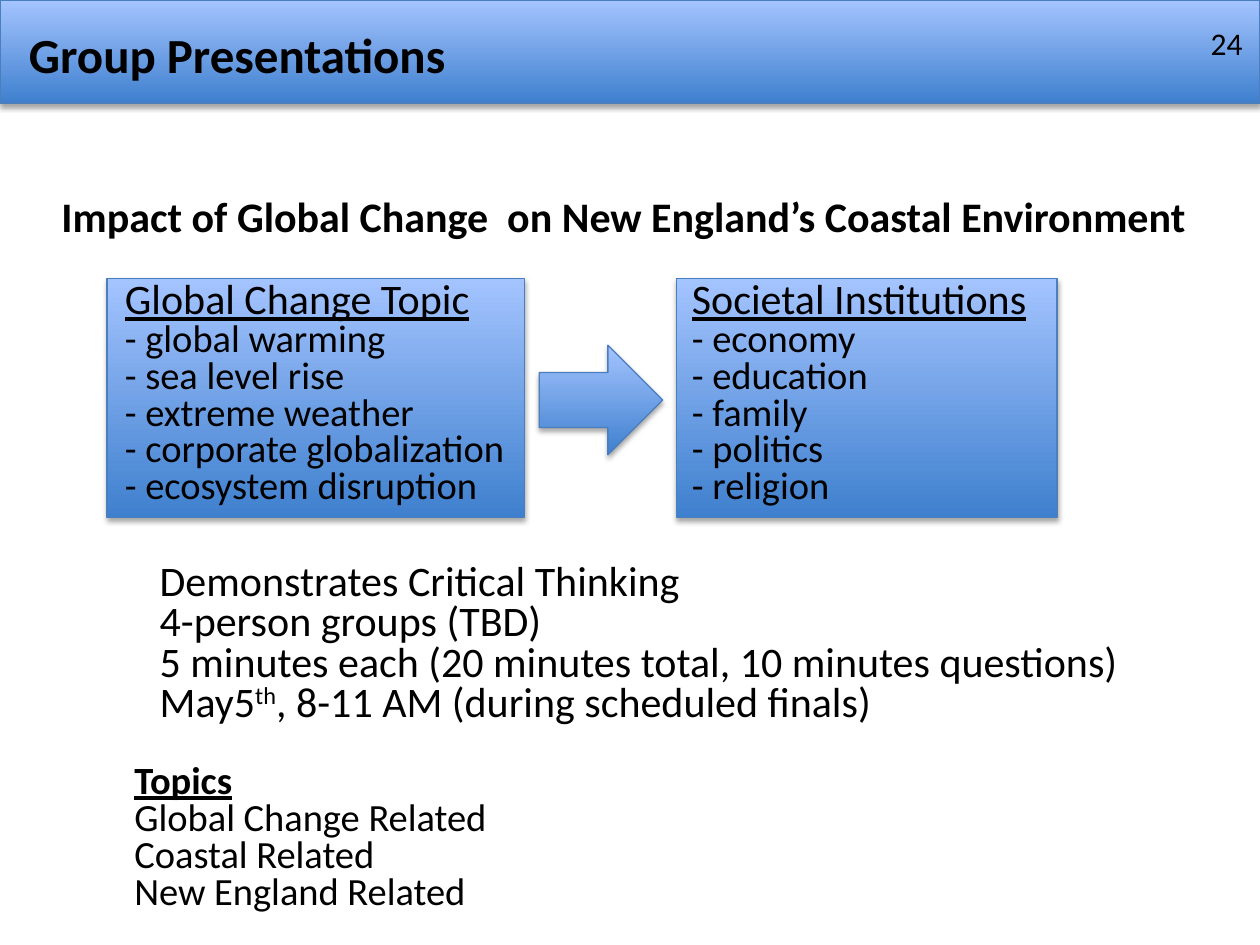
from dataclasses import dataclass

from lxml import etree
from pptx import Presentation
from pptx import util as u
from pptx.dml.color import RGBColor
from pptx.enum import shapes, text
from pptx.oxml.ns import qn


@dataclass(frozen=True)
class Theme:
    font: str = "Calibri"
    ink: str = "000000"
    deep: str = "3F80CE"
    pale: str = "A4C4FF"
    edge: str = "4B7EBC"
    title: int = 28
    heading: int = 24
    item: int = 22
    number: int = 18
    tight: float = 0.8


THEME = Theme()


@dataclass(frozen=True)
class Box:
    left: float
    top: float
    width: float
    height: float

    def within(self, left, top, width, height):
        """Return a box placed relative to this one."""
        return Box(self.left + left, self.top + top, width, height)

    def lengths(self):
        return [u.Cm(n) for n in (self.left, self.top, self.width, self.height)]


def add_run(para, words, size, bold=False, underline=False, raised=False):
    span = para.add_run()
    span.text = words
    font = span.font
    font.name, font.size = THEME.font, u.Pt(size)
    font.bold, font.underline = bold, underline
    font.color.rgb = RGBColor.from_string(THEME.ink)
    if raised:
        span._r.get_or_add_rPr().set("baseline", "30000")


def write_lines(frame, lines, spacing=THEME.tight):
    """Each line is a list of runs: (words, size, optional styles)."""
    for index, line in enumerate(lines):
        para = frame.add_paragraph() if index else frame.paragraphs[0]
        para.alignment = text.PP_ALIGN.LEFT
        para.line_spacing = spacing
        for words, size, *styles in line:
            add_run(para, words, size, **{style: True for style in styles})


def add_text(page, box, lines, spacing=THEME.tight):
    frame = page.shapes.add_textbox(*box.lengths()).text_frame
    frame.word_wrap = True
    write_lines(frame, lines, spacing)
    return frame


def add_glossy(page, kind, box):
    """Preset shape with the blue gradient, thin edge and soft shadow."""
    shape = page.shapes.add_shape(kind, *box.lengths())
    shape.fill.gradient()
    shape.fill.gradient_angle = 90
    for stop, colour, position in zip(
            shape.fill.gradient_stops, (THEME.deep, THEME.pale), (0, 1)):
        stop.color.rgb = RGBColor.from_string(colour)
        stop.position = position
    shape.line.color.rgb = RGBColor.from_string(THEME.edge)
    shape.line.width = u.Pt(0.75)
    shape.shadow.inherit = False
    effects = shape._element.spPr.find(qn("a:effectLst"))
    shadow = etree.SubElement(
        effects, qn("a:outerShdw"), blurRad=str(u.Pt(3.1)),
        dist=str(u.Pt(1.8)), dir="5400000", rotWithShape="0")
    colour = etree.SubElement(shadow, qn("a:srgbClr"), val="000000")
    etree.SubElement(colour, qn("a:alpha"), val="35000")
    return shape


def add_header(page, box, words, number):
    band = add_glossy(page, shapes.MSO_SHAPE.RECTANGLE, box)
    page.shapes._spTree.insert(2, band._element)  # behind the title

    title = page.shapes.title
    title.left, title.top, title.width, title.height = box.within(
        0.33, 0.36, 24.69, 1.45).lengths()
    frame = title.text_frame
    frame.auto_size = text.MSO_AUTO_SIZE.NONE
    frame.vertical_anchor = text.MSO_ANCHOR.MIDDLE
    write_lines(frame, [[(words, THEME.title, "bold")]], 1.0)

    frame = add_text(page, box.within(19.38, 0.36, 5.92, 1.02),
                     [[(number, THEME.number)]], 1.0)
    frame.vertical_anchor = text.MSO_ANCHOR.MIDDLE
    frame.paragraphs[0].alignment = text.PP_ALIGN.RIGHT


def add_panel(page, box, inset, heading, items):
    panel = add_glossy(page, shapes.MSO_SHAPE.RECTANGLE, box)
    frame = panel.text_frame
    frame.word_wrap = True
    frame.vertical_anchor = text.MSO_ANCHOR.TOP
    frame.margin_left, frame.margin_top = u.Cm(inset), u.Cm(0.08)
    frame.margin_right = frame.margin_bottom = 0
    write_lines(frame, [[(heading, THEME.heading, "underline")]]
                + [[("- " + item, THEME.item)] for item in items])


def add_impact(page, box):
    """Heading above two panels joined by an arrow."""
    add_text(page, box.within(0, 0, 24, 1.1), [[(
        "Impact of Global Change  on New England’s Coastal Environment",
        THEME.heading, "bold")]])
    add_panel(page, box.within(1.17, 1.7, 8.41, 4.83), 0.36,
              "Global Change Topic",
              ["global warming", "sea level rise", "extreme weather",
               "corporate globalization", "ecosystem disruption"])
    add_panel(page, box.within(12.65, 1.7, 7.67, 4.83), 0.31,
              "Societal Institutions",
              ["economy", "education", "family", "politics", "religion"])
    add_glossy(page, shapes.MSO_SHAPE.RIGHT_ARROW,
               box.within(9.88, 3.05, 2.49, 2.21))


def add_details(page, box):
    size = THEME.heading
    add_text(page, box, [
        [("Demonstrates Critical Thinking", size)],
        [("4-person groups (TBD)", size)],
        [("5 minutes each (20 minutes total, 10 minutes questions)", size)],
        [("May5", size), ("th", size, "raised"),
         (", 8-11 AM (during scheduled finals)", size)],
    ])


def add_topics(page, box):
    areas = ("Global Change", "Coastal", "New England")
    add_text(page, box, [[("Topics", THEME.item, "bold", "underline")]]
             + [[(area + " Related", THEME.item)] for area in areas])


def main():
    deck = Presentation()
    deck.slide_width, deck.slide_height = u.Cm(25.4), u.Cm(19.05)
    page = deck.slides.add_slide(deck.slide_layouts.get_by_name("Title Only"))
    add_header(page, Box(0, 0, 25.4, 2.08), "Group Presentations", "24")
    add_impact(page, Box(0.99, 3.91, 23.52, 7.34))
    add_details(page, Box(2.97, 11.25, 21.54, 3.58))
    add_topics(page, Box(2.46, 15.29, 7.72, 3.3))
    deck.save("out.pptx")


if __name__ == "__main__":
    main()
